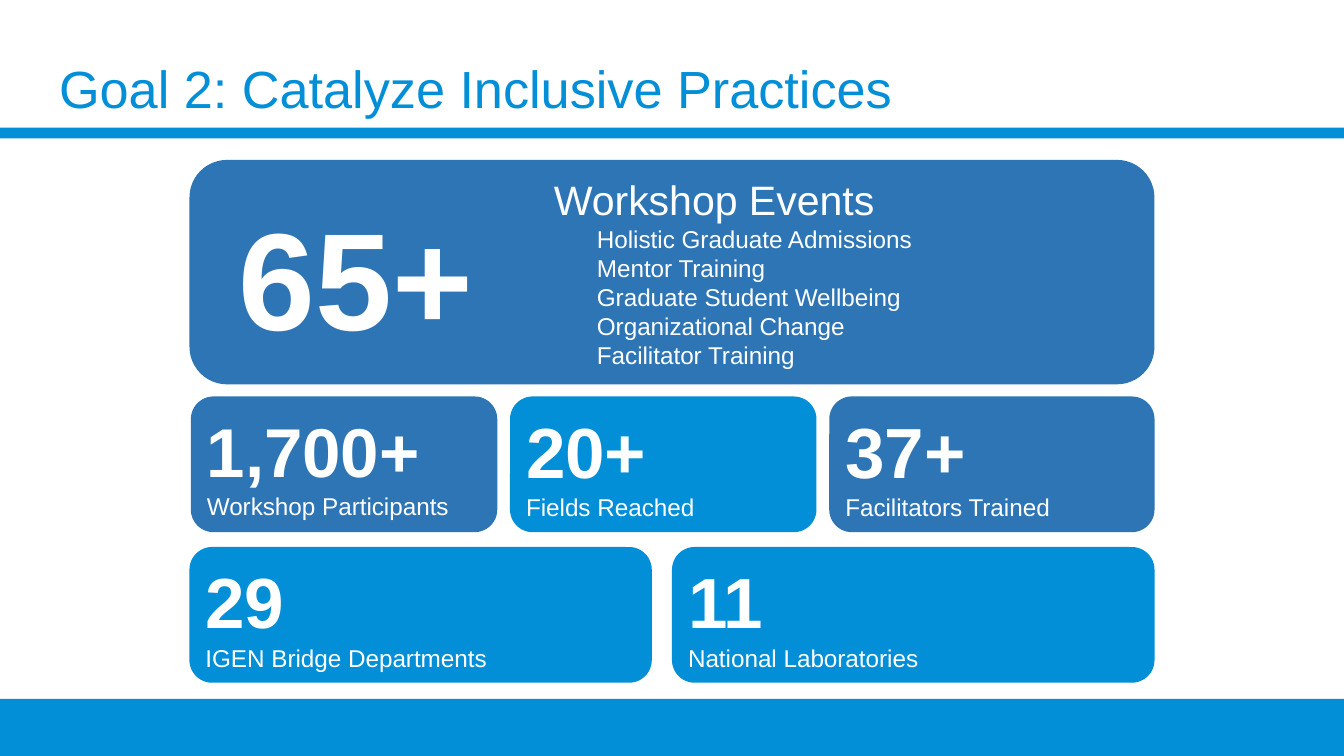
import pptx
import pptx.dml.color
import pptx.enum.shapes
import pptx.enum.text
import pptx.util

HUES = {"sky": "028FD7", "steel": "2E75B5", "white": "FFFFFF"}
FONT = "Arial"
COLS = 1000
ROWS = COLS * 9 / 16
KIND = pptx.enum.shapes.MSO_SHAPE
ANCHOR = pptx.enum.text.MSO_ANCHOR
ALIGN = pptx.enum.text.PP_ALIGN

deck = pptx.Presentation()
deck.slide_width = pptx.util.Inches(10)
deck.slide_height = deck.slide_width * 9 // 16
UNIT = deck.slide_width / COLS


def span(*cells):
    return [round(cell * UNIT) for cell in cells]


def hue(name):
    return pptx.dml.color.RGBColor.from_string(HUES[name])


def panel(slide, box, fill, kind=KIND.RECTANGLE):
    shape = slide.shapes.add_shape(kind, *span(*box))
    shape.shadow.inherit = False
    shape.fill.solid()
    shape.fill.fore_color.rgb = hue(fill)
    shape.line.fill.background()
    return shape


def write(shape, lines, inset=7, anchor=ANCHOR.MIDDLE, align=ALIGN.LEFT):
    frame = shape.text_frame
    frame.word_wrap = True
    frame.auto_size = pptx.enum.text.MSO_AUTO_SIZE.NONE
    frame.vertical_anchor = anchor
    pad = span(inset)[0]
    frame.margin_left = frame.margin_right = pad
    frame.margin_top = frame.margin_bottom = pad
    for spot, (text, size, bold, color, indent) in enumerate(lines):
        para = frame.add_paragraph() if spot else frame.paragraphs[0]
        para.alignment = align
        para.line_spacing = 1.0
        para.space_before = para.space_after = pptx.util.Pt(0)
        if indent:
            props = para._p.get_or_add_pPr()
            props.set("marL", str(span(indent)[0]))
            props.set("indent", "0")
        run = para.add_run()
        run.text = text
        run.font.name = FONT
        run.font.size = pptx.util.Pt(size)
        run.font.bold = bold
        run.font.color.rgb = hue(color)


def header(slide, box):
    left, top, width, height = box
    title = slide.shapes.title
    title.left, title.top, title.width, title.height = span(
        left + 34, top + 32, width - 68, height - 40)
    write(title, [("Goal 2: Catalyze Inclusive Practices", 28, False, "sky", 0)],
          inset=10, anchor=ANCHOR.TOP)
    panel(slide, (left, top + height - 8, width, 8), "sky")


def hero(slide, box, count, head, items):
    left, top, width, height = box
    card = panel(slide, box, "steel", KIND.ROUNDED_RECTANGLE)
    lines = [(head, 22, False, "white", 256)]
    lines += [(item, 13, False, "white", 288) for item in items]
    write(card, lines)
    label = slide.shapes.add_textbox(*span(left + 10, top + 17, 228, height - 27))
    write(label, [(count, 74, True, "white", 0)],
          anchor=ANCHOR.TOP, align=ALIGN.CENTER)


def band(slide, box, each, gap, cards):
    left, top, width, height = box
    for spot, (count, size, text, fill) in enumerate(cards):
        start = spot * (each + gap)
        wide = width - start if spot == len(cards) - 1 else each
        card = panel(slide, (left + start, top, wide, height), fill,
                     KIND.ROUNDED_RECTANGLE)
        write(card, [(count, size, True, "white", 0), (text, 13, False, "white", 0)])


def main():
    slide = deck.slides.add_slide(deck.slide_layouts[5])
    header(slide, (0, 0, COLS, 103))
    hero(slide, (141, 119, 718, 167), "65+", "Workshop Events", [
        "Holistic Graduate Admissions",
        "Mentor Training",
        "Graduate Student Wellbeing",
        "Organizational Change",
        "Facilitator Training",
    ])
    band(slide, (142, 295, 717, 101), 228, 9.5, [
        ("1,700+", 37, "Workshop Participants", "steel"),
        ("20+", 38, "Fields Reached", "sky"),
        ("37+", 38, "Facilitators Trained", "steel"),
    ])
    band(slide, (141, 407, 718, 101), 344, 15, [
        ("29", 38, "IGEN Bridge Departments", "sky"),
        ("11", 38, "National Laboratories", "sky"),
    ])
    panel(slide, (0, 520, COLS, ROWS - 520), "sky")
    deck.save("out.pptx")


if __name__ == "__main__":
    main()
